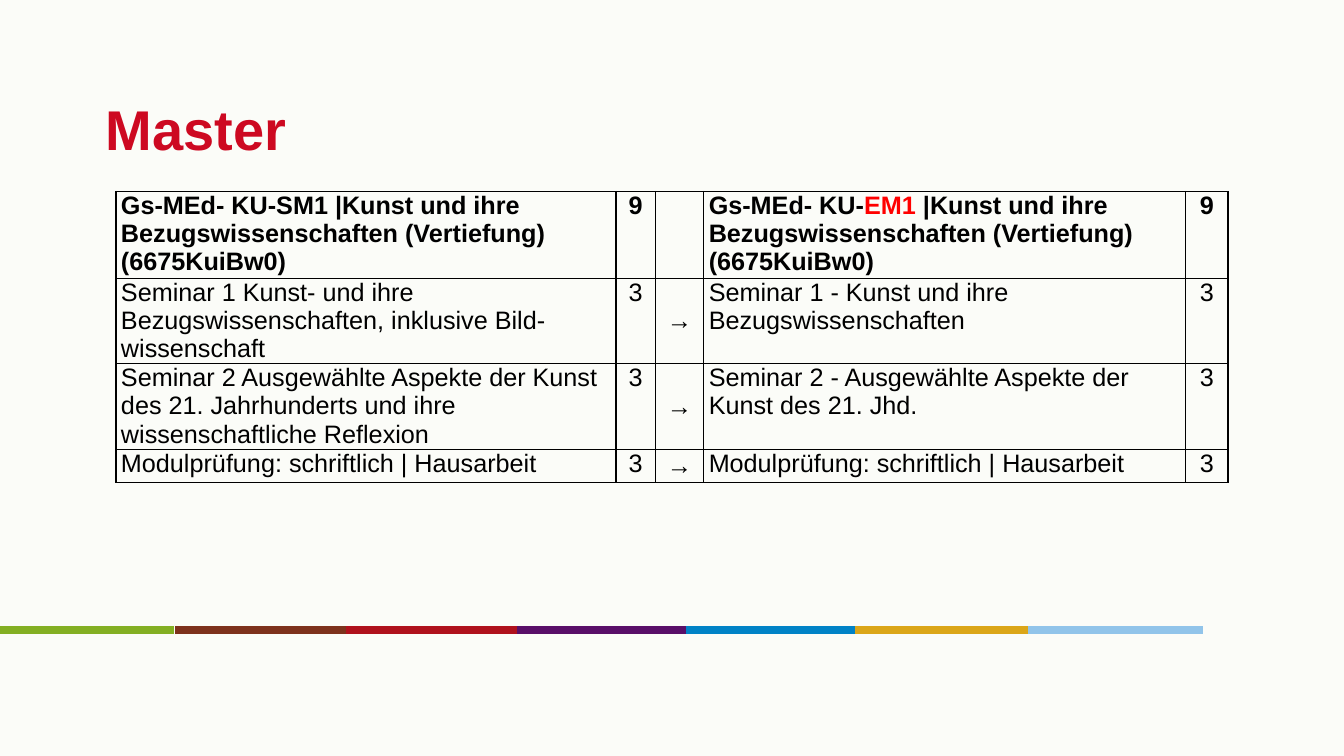
import collections
import dataclasses

import lxml.etree
import pptx
import pptx.dml.color
import pptx.enum.shapes
import pptx.enum.text
import pptx.oxml
import pptx.oxml.ns
import pptx.util

Inches = pptx.util.Inches
Box = collections.namedtuple("Box", "left top width height")


@dataclasses.dataclass(frozen=True)
class Theme:
    font: str = "Arial"
    background: str = "FBFCF8"
    title: str = "CD0921"
    text: str = "000000"
    accent: str = "FF0000"
    border: str = "000000"
    title_size: float = 40
    body_size: float = 18
    border_width: float = 1
    stripe_width: float = 5.5


THEME = Theme()
SLIDE = Box(0, 0, 13.33, 7.5)

# Each stripe: its start in inches and its colour
STRIPE_LENGTH = 1.73
STRIPES = [
    (0, "83AF23"), (1.74, "7D321D"), (3.43, "AF111D"), (5.13, "590F68"),
    (6.8, "0082C6"), (8.48, "DBA619"), (10.2, "91C4EA"),
]

# Column widths and row heights as shares of the table
COLUMNS = [4.96, 0.39, 0.48, 4.78, 0.42]
ROWS = [0.86, 0.85, 0.85, 0.33]
ARROW_COLUMN = 2
TEXT_COLUMNS = (0, 3)

# A cell is a list of (text, colour) spans, or plain text
MODULES = [
    ["Gs-MEd- KU-SM1 |Kunst und ihre Bezugswissenschaften (Vertiefung) (6675KuiBw0)",
     "9", "",
     [("Gs-MEd- KU-", THEME.text), ("EM1", THEME.accent),
      (" |Kunst und ihre Bezugswissenschaften (Vertiefung) (6675KuiBw0)", THEME.text)],
     "9"],
    ["Seminar 1 Kunst- und ihre Bezugswissenschaften, inklusive Bild-wissenschaft",
     "3", "→", "Seminar 1 - Kunst und ihre Bezugswissenschaften", "3"],
    ["Seminar 2 Ausgewählte Aspekte der Kunst des 21. Jahrhunderts und ihre "
     "wissenschaftliche Reflexion",
     "3", "→", "Seminar 2 - Ausgewählte Aspekte der Kunst des 21. Jhd.", "3"],
    ["Modulprüfung: schriftlich | Hausarbeit",
     "3", "→", "Modulprüfung: schriftlich | Hausarbeit", "3"],
]


def rgb(value):
    return pptx.dml.color.RGBColor.from_string(value)


def set_all(target, values):
    for name, value in values.items():
        setattr(target, name, value)


def format_font(font, size, color, bold):
    set_all(font, {"name": THEME.font, "size": pptx.util.Pt(size), "bold": bold})
    font.color.rgb = rgb(color)


def set_margins(target, side, end):
    set_all(target, {
        "margin_left": Inches(side), "margin_right": Inches(side),
        "margin_top": Inches(end), "margin_bottom": Inches(end),
    })


def add_stripes(page, box):
    """Coloured band along the foot of the slide."""
    for start, color in STRIPES:
        left = box.left + start
        stripe = page.shapes.add_connector(
            pptx.enum.shapes.MSO_CONNECTOR.STRAIGHT,
            Inches(left), Inches(box.top),
            Inches(left + STRIPE_LENGTH), Inches(box.top))
        stripe.line.color.rgb = rgb(color)
        stripe.line.width = pptx.util.Pt(THEME.stripe_width)
        properties = stripe._element.spPr
        lxml.etree.SubElement(properties, pptx.oxml.ns.qn("a:effectLst"))


def add_title(page, box, text):
    title = page.shapes.title
    set_all(title, {name: Inches(value) for name, value in box._asdict().items()})
    frame = title.text_frame
    set_margins(frame, 0.05, 0.05)
    set_all(frame, {"word_wrap": True,
                    "vertical_anchor": pptx.enum.text.MSO_ANCHOR.MIDDLE})
    para = frame.paragraphs[0]
    para.alignment = pptx.enum.text.PP_ALIGN.LEFT
    span = para.add_run()
    span.text = text
    format_font(span.font, THEME.title_size, THEME.title, True)


def add_borders(cell):
    properties = cell._tc.get_or_add_tcPr()
    for index, side in enumerate(("lnL", "lnR", "lnT", "lnB")):
        properties.insert(index, pptx.oxml.parse_xml(
            f'<a:{side} {pptx.oxml.ns.nsdecls("a")} '
            f'w="{pptx.util.Pt(THEME.border_width)}">'
            f'<a:solidFill><a:srgbClr val="{THEME.border}"/></a:solidFill>'
            f'</a:{side}>'))


def fill_cell(cell, content, column, bold):
    cell.fill.background()
    add_borders(cell)
    set_margins(cell, 0.05, 0)
    align = pptx.enum.text.PP_ALIGN
    anchor = pptx.enum.text.MSO_ANCHOR
    cell.vertical_anchor = anchor.MIDDLE if column == ARROW_COLUMN else anchor.TOP
    para = cell.text_frame.paragraphs[0]
    para.alignment = align.LEFT if column in TEXT_COLUMNS else align.CENTER
    if not content:
        format_font(para.font, THEME.body_size, THEME.text, bold)
        return
    spans = [(content, THEME.text)] if isinstance(content, str) else content
    for text, color in spans:
        span = para.add_run()
        span.text = text
        format_font(span.font, THEME.body_size, color, bold)


def add_module_table(page, box):
    """Old modules on the left, their replacements on the right."""
    table = page.shapes.add_table(
        len(ROWS), len(COLUMNS), *(Inches(value) for value in box)).table
    set_all(table, {"first_row": False, "horz_banding": False})
    for column, share in zip(table.columns, COLUMNS):
        column.width = Inches(box.width * share / sum(COLUMNS))
    for row, share in zip(table.rows, ROWS):
        row.height = Inches(box.height * share / sum(ROWS))
    for row, contents in enumerate(MODULES):
        for column, content in enumerate(contents):
            fill_cell(table.cell(row, column), content, column, row == 0)


def build_master_slide(deck, box):
    page = deck.slides.add_slide(deck.slide_layouts[5])
    background = page.background.fill
    background.solid()
    background.fore_color.rgb = rgb(THEME.background)
    add_stripes(page, Box(box.left, box.height * 5 / 6, box.width, 0))
    add_title(page, Box(box.left + 1, box.top + 0.65, box.width * 0.85, box.height / 6),
              "Master")
    add_module_table(page, Box(box.left + 1.15, box.top + 1.9, sum(COLUMNS), sum(ROWS)))


def main():
    deck = pptx.Presentation()
    set_all(deck, {"slide_width": Inches(SLIDE.width),
                   "slide_height": Inches(SLIDE.height)})
    build_master_slide(deck, SLIDE)
    deck.save("out.pptx")


if __name__ == "__main__":
    main()
